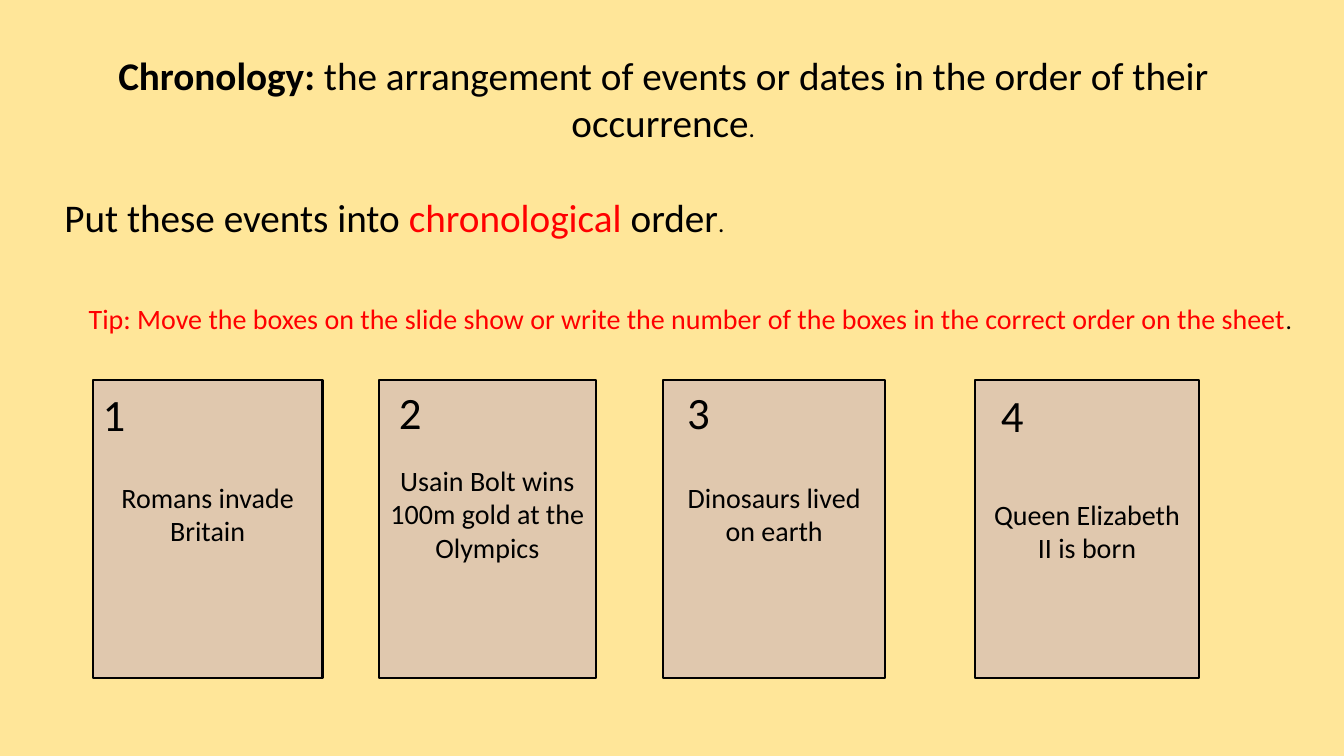
from dataclasses import dataclass

from pptx import Presentation
from pptx.dml.color import RGBColor
from pptx.enum.shapes import MSO_SHAPE
from pptx.enum.text import MSO_ANCHOR, MSO_AUTO_SIZE, PP_ALIGN
from pptx.util import Pt


@dataclass(frozen=True)
class Theme:
    """Colours, font and type sizes of the lesson slide."""
    font: str = "Calibri"
    background: RGBColor = RGBColor(0xFF, 0xE6, 0x99)
    card: RGBColor = RGBColor(0xE0, 0xC8, 0xAE)
    ink: RGBColor = RGBColor(0, 0, 0)
    accent: RGBColor = RGBColor(0xFF, 0, 0)
    number: int = 32
    heading: int = 28
    body: int = 20
    stop: int = 18


THEME = Theme()


def add_text(p, text, size=THEME.body, color=THEME.ink, bold=False):
    """Append a formatted run to a paragraph."""
    r = p.add_run()
    r.text = text
    r.font.name = THEME.font
    r.font.size = Pt(size)
    r.font.bold = bold
    r.font.color.rgb = color


class LessonSlide:
    """Draws the elements of one slide in a given theme."""

    def __init__(self, prs, theme):
        """Add a title-only slide with the theme background."""
        self.theme = theme
        self.s = prs.slides.add_slide(prs.slide_layouts[5])
        self.s.background.fill.solid()
        self.s.background.fill.fore_color.rgb = theme.background

    def title(self, box, runs):
        """Place and fill the title placeholder."""
        sp = self.s.shapes.title
        sp.left, sp.top, sp.width, sp.height = map(Pt, box)
        self.fill_text(sp.text_frame, runs, PP_ALIGN.CENTER, MSO_ANCHOR.TOP)

    def text(self, box, runs):
        """Add a left-aligned text box."""
        sp = self.s.shapes.add_textbox(*map(Pt, box))
        self.fill_text(sp.text_frame, runs, PP_ALIGN.LEFT, MSO_ANCHOR.TOP)

    def card(self, box, event, top_inset):
        """Add an event card with its text centred above the middle."""
        sp = self.s.shapes.add_shape(MSO_SHAPE.RECTANGLE, *map(Pt, box))
        sp.shadow.inherit = False
        sp.fill.solid()
        sp.fill.fore_color.rgb = self.theme.card
        sp.line.color.rgb = self.theme.ink
        sp.line.width = Pt(1.5)
        tf = sp.text_frame
        tf.margin_top, tf.margin_bottom = Pt(top_inset), Pt(25.6)
        self.fill_text(tf, [(event, {})], PP_ALIGN.CENTER, MSO_ANCHOR.MIDDLE)

    def fill_text(self, tf, runs, align, anchor):
        """Write runs into the first paragraph of a text frame."""
        tf.word_wrap = True
        tf.auto_size = MSO_AUTO_SIZE.NONE
        tf.vertical_anchor = anchor
        p = tf.paragraphs[0]
        p.alignment = align
        for text, style in runs:
            add_text(p, text, **style)


def main():
    """Build the chronology slide."""
    prs = Presentation()
    prs.slide_width, prs.slide_height = Pt(960), Pt(540)
    slide = LessonSlide(prs, THEME)
    heading = {"size": THEME.heading}
    stop = (".", {"size": THEME.stop})

    slide.title((29.5, 33.1, 888.5, 74.9), [
        ("Chronology: ", {**heading, "bold": True}),
        ("the arrangement of events or dates in the order of their occurrence", heading),
        stop,
    ])
    slide.text((38.9, 134.6, 510, 41), [
        ("Put these events into ", heading),
        ("chronological ", {**heading, "color": THEME.accent}),
        ("order", heading),
        stop,
    ])

    cards = [
        (66.2, 164.2, 3.6, "Romans invade Britain", 66.2, 272.9),
        (270.7, 154.8, 3.6, "Usain Bolt wins 100m gold at the Olympics", 277.9, 271.4),
        (473.8, 158.4, 3.6, "Dinosaurs lived on earth", 483.8, 271.4),
        (696.2, 160.6, 28, "Queen Elizabeth II is born", 707.8, 273.6),
    ]
    for number, (left, width, inset, event, num_left, num_top) in enumerate(cards, 1):
        slide.card((left, 271.4, width, 213.1), event, inset)
        slide.text((num_left, num_top, 36, 46), [(str(number), {"size": THEME.number})])

    slide.text((56.2, 211.7, 896, 31.7), [
        ("Tip: Move the boxes on the slide show or write the number of the boxes "
         "in the correct order on the sheet", {"color": THEME.accent}),
        stop,
    ])
    prs.save("out.pptx")


if __name__ == "__main__":
    main()
